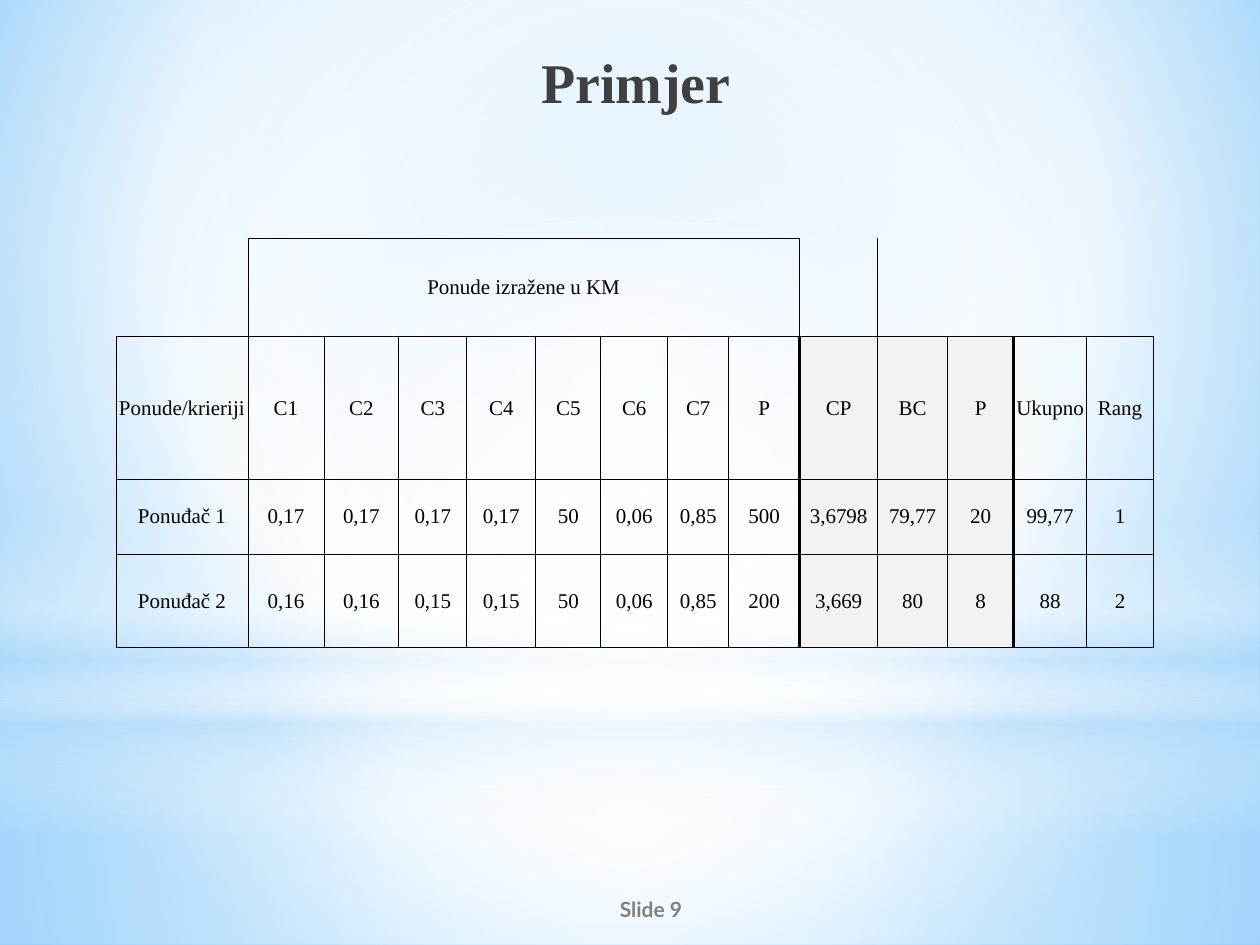
from lxml import etree
from pptx import Presentation
from pptx.dml.color import RGBColor
from pptx.enum.shapes import MSO_SHAPE
from pptx.enum.text import MSO_ANCHOR, MSO_AUTO_SIZE, PP_ALIGN
from pptx.oxml.ns import qn
from pptx.util import Emu, Pt

RECT, OVAL = MSO_SHAPE.RECTANGLE, MSO_SHAPE.OVAL
TOP, MIDDLE = MSO_ANCHOR.TOP, MSO_ANCHOR.MIDDLE
CENTER = PP_ALIGN.CENTER
SERIF = "Times New Roman"
NO_STYLE = "{2D5ABB26-0587-4C30-8999-92F81FD0307C}"

TITLE = "Primjer"
FOOTER = "Slide 9"
GROUP_HEADING = "Ponude izražene u KM"
ROWS = [
    ["Ponude/krieriji", "C1", "C2", "C3", "C4", "C5", "C6", "C7", "P",
     "CP", "BC", "P", "Ukupno", "Rang"],
    ["Ponuđač 1", "0,17", "0,17", "0,17", "0,17", "50", "0,06", "0,85", "500",
     "3,6798", "79,77", "20", "99,77", "1"],
    ["Ponuđač 2", "0,16", "0,16", "0,15", "0,15", "50", "0,06", "0,85", "200",
     "3,669", "80", "8", "88", "2"],
]
COL_WIDTHS = [132, 76, 75, 68, 69, 65, 67, 61, 71, 78, 70, 66, 73, 67]
ROW_HEIGHTS = [98, 143, 75, 94]
GROUP_FIRST, GROUP_LAST = 1, 8
SHADED = range(9, 12)
THIN, THICK = 0.5, 2

# Stops are (position %, colour, opacity %)
BACKGROUND = [(0, "9ED5FF", 100), (60, "FFFFFF", 100), (100, "5BB9FF", 100)]
MID = (50, 50, 50, 50)
BACKDROPS = [  # shape, box, stops, focus of a radial gradient or None
    (RECT, (0, 703, 1260, 242),
     [(0, "FFFFFF", 91), (37, "FFFFFF", 76), (100, "B4DCFA", 79)], MID),
    (RECT, (0, 0, 1260, 703),
     [(0, "FFFFFF", 89), (48, "FFFFFF", 62), (100, "B4DCFA", 79)], MID),
    (RECT, (0, 519, 1260, 315),
     [(0, "FFFFFF", 0), (29, "FFFFFF", 30), (45, "B4DCFA", 40),
      (55, "FFFFFF", 26), (65, "B4DCFA", 60), (100, "FFFFFF", 0)], None),
    (OVAL, (0, 220, 1260, 703),
     [(0, "FFFFFF", 100), (56, "FFFFFF", 0)], MID),
]


def px(n):
    return Emu(round(n * 914400 / 126))


def rgb(color):
    return RGBColor.from_string(color)


def add(parent, tag, **attrs):
    return etree.SubElement(parent, qn(tag), {k: str(v) for k, v in attrs.items()})


def set_gradient(owner, fill, stops, focus):
    """Radial around focus (left, top, right, bottom %), or downward if None."""
    fill.gradient()
    grad = next(owner.element.iter(qn("a:gradFill")))
    for child in list(grad):
        grad.remove(child)
    gs_list = add(grad, "a:gsLst")
    for pos, color, opacity in stops:
        gs = add(gs_list, "a:gs", pos=pos * 1000)
        clr = add(gs, "a:srgbClr", val=color)
        if opacity < 100:
            add(clr, "a:alpha", val=opacity * 1000)
    if focus:
        radial = add(grad, "a:path", path="circle")
        add(radial, "a:fillToRect", **{k: v * 1000 for k, v in zip("ltrb", focus)})
    else:
        add(grad, "a:lin", ang=90 * 60000, scaled=0)


def write(tf, text, size, color, font, bold=False):
    p = tf.paragraphs[0]
    p.alignment = CENTER
    r = p.add_run()
    r.text = text
    r.font.size, r.font.name, r.font.bold = Pt(size), font, bold
    r.font.color.rgb = rgb(color)


def set_borders(cell, **widths):
    tc_pr = cell._tc.get_or_add_tcPr()
    for side in "LRTB":
        if side in widths:
            ln = add(tc_pr, f"a:ln{side}", w=Pt(widths[side]))
            add(add(ln, "a:solidFill"), "a:srgbClr", val="000000")


def fill_cell(cell, text):
    cell.margin_left = cell.margin_right = cell.margin_top = px(1)
    cell.margin_bottom = 0
    cell.vertical_anchor = MIDDLE
    write(cell.text_frame, text, 12, "000000", SERIF)


def add_bids_table(slide):
    frame = slide.shapes.add_table(len(ROW_HEIGHTS), len(COL_WIDTHS), px(116), px(238),
                                   px(sum(COL_WIDTHS)), px(sum(ROW_HEIGHTS)))
    table = frame.table
    next(frame.element.iter(qn("a:tableStyleId"))).text = NO_STYLE
    table.first_row = table.horz_banding = False
    for col, w in zip(table.columns, COL_WIDTHS):
        col.width = px(w)
    for row, h in zip(table.rows, ROW_HEIGHTS):
        row.height = px(h)

    heading = table.cell(0, GROUP_FIRST)
    heading.merge(table.cell(0, GROUP_LAST))
    fill_cell(heading, GROUP_HEADING)
    set_borders(heading, L=THIN, R=THIN, T=THIN, B=THIN)
    set_borders(table.cell(0, GROUP_LAST + 1), L=THIN)

    thick_edges = (SHADED.start, SHADED.stop)
    for i, values in enumerate(ROWS, 1):
        for j, value in enumerate(values):
            cell = table.cell(i, j)
            fill_cell(cell, value)
            set_borders(cell, T=THIN, B=THIN,
                        L=THICK if j in thick_edges else THIN,
                        R=THICK if j + 1 in thick_edges else THIN)
            if j in SHADED:
                cell.fill.solid()
                cell.fill.fore_color.rgb = rgb("F2F2F2")
            else:
                cell.fill.background()


def main():
    prs = Presentation()
    prs.slide_width, prs.slide_height = px(1260), px(945)
    slide = prs.slides.add_slide(prs.slide_layouts[5])
    set_gradient(slide, slide.background.fill, BACKGROUND, (20, 10, 20, 60))

    for kind, box, stops, focus in BACKDROPS:
        sp = slide.shapes.add_shape(kind, *map(px, box))
        sp.shadow.inherit = False
        sp.line.fill.background()
        set_gradient(sp, sp.fill, stops, focus)

    title = slide.shapes.title
    title.element.getparent().append(title.element)  # in front of the backdrops
    title.left, title.top, title.width, title.height = map(px, (146, 34, 980, 110))
    tf = title.text_frame
    tf.auto_size = MSO_AUTO_SIZE.NONE
    tf.vertical_anchor = TOP
    tf.margin_top = px(14)
    write(tf, TITLE, 32, "404040", SERIF, bold=True)

    footer = slide.shapes.add_textbox(*map(px, (525, 890, 252, 39)))
    footer.text_frame.word_wrap = True
    footer.text_frame.vertical_anchor = MIDDLE
    write(footer.text_frame, FOOTER, 12, "808080", "Lato", bold=True)

    add_bids_table(slide)
    prs.save("out.pptx")


if __name__ == "__main__":
    main()
